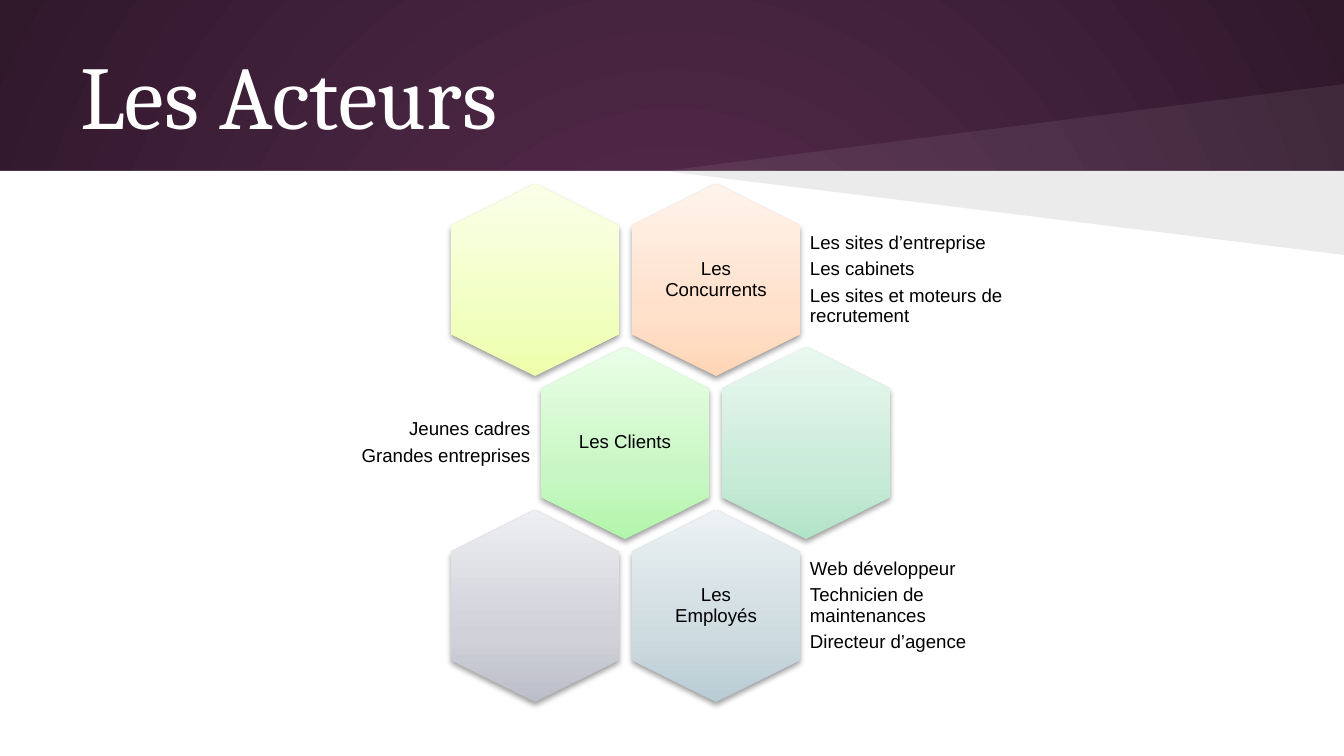
from dataclasses import dataclass
from lxml.etree import SubElement
from pptx import Presentation
from pptx.dml.color import RGBColor
from pptx.enum.shapes import MSO_SHAPE
from pptx.enum.text import MSO_ANCHOR, PP_ALIGN
from pptx.oxml.ns import qn
from pptx.util import Pt

PX = 914400 / 134.4  # EMU in one px
WIDE, HIGH, BAND = 1344, 756, 171
HEX_W, HEX_H = 192, 168  # before the quarter turn


@dataclass(frozen=True)
class Theme:
    white: str = "FFFFFF"
    black: str = "000000"
    back: tuple = ((0, "592D50"), (100, "30182B"))
    head: str = "Cambria"
    body: str = "Arial"
    big: int = 48
    small: int = 10
    lime: tuple = ("EDFFAB", "F2FFC3", "FAFFE8")
    peach: tuple = ("FFD6B6", "FFE1CB", "FFF3EB")
    green: tuple = ("B2F6AB", "C9F7C4", "EAFDE7")
    mint: tuple = ("B2E4C8", "C9EBD8", "EAF8F0")
    grey: tuple = ("BCBEC9", "D0D1D9", "EDEEF1")
    blue: tuple = ("B9CDD4", "CEDBE0", "ECF2F4")


THEME = Theme()


def box(*sizes):
    return [round(n * PX) for n in sizes]


def add(parent, tag, **attrs):
    return SubElement(parent, qn(tag), {k: str(v) for k, v in attrs.items()})


def paint(shape, color, alpha=100):
    shape.shadow.inherit = False
    shape.line.fill.background()
    shape.fill.solid()
    shape.fill.fore_color.rgb = RGBColor.from_string(color)
    if alpha < 100:
        tint = shape.fill._xPr.find(".//" + qn("a:srgbClr"))
        add(tint, "a:alpha", val=alpha * 1000)


def blend(props, stops):
    """Swap the solid fill in props for a gradient and return it."""
    solid = props.find(qn("a:solidFill"))
    grad = add(props, "a:gradFill", rotWithShape=0)
    props.replace(solid, grad)
    items = add(grad, "a:gsLst")
    for pos, color in stops:
        add(add(items, "a:gs", pos=pos * 1000), "a:srgbClr", val=color)
    return grad


def set_back(slide):
    fill = slide.background.fill
    fill.solid()
    grad = blend(slide._element.find(".//" + qn("p:bgPr")), THEME.back)
    rays = add(grad, "a:path", path="circle")
    add(rays, "a:fillToRect", l=50000, t=50000, r=50000, b=50000)


def add_wedge(slide, tip, color, alpha):
    start, *rest = [box(x, y) for x, y in
                    ((WIDE, BAND), (665, BAND), (WIDE, tip))]
    form = slide.shapes.build_freeform(*start, scale=1.0)
    form.add_line_segments(rest, close=True)
    paint(form.convert_to_shape(), color, alpha)


def style(frame, font, size, color, align, pad):
    frame.word_wrap = True
    frame.vertical_anchor = MSO_ANCHOR.MIDDLE
    frame.margin_left = frame.margin_right = round(pad * PX)
    frame.margin_top = frame.margin_bottom = round(pad * PX)
    for para in frame.paragraphs:
        para.alignment = align
        for run in para.runs:
            run.font.name = font
            run.font.size = Pt(size)
            run.font.color.rgb = RGBColor.from_string(color)


def add_title(slide, text):
    title = slide.shapes.title
    title.left, title.top, title.width, title.height = box(67, 31, 1210, 126)
    title.text_frame.text = text
    style(title.text_frame, THEME.head, THEME.big, THEME.white,
          PP_ALIGN.LEFT, 13)
    slide.shapes._spTree.append(title._element)  # above the band


def add_text(slide, left, mid, wide, high, text, align):
    area = slide.shapes.add_textbox(*box(left, mid - high / 2, wide, high))
    frame = area.text_frame
    frame.text = text
    style(frame, THEME.body, THEME.small, THEME.black, align, 5)
    for para in frame.paragraphs:
        para.line_spacing = 0.9
        para.space_after = Pt(3.5)


def add_hex(slide, x, y, tones):
    cell = slide.shapes.add_shape(
        MSO_SHAPE.HEXAGON, *box(x - HEX_W / 2, y - HEX_H / 2, HEX_W, HEX_H))
    cell.rotation = 90
    cell.adjustments[0] = 0.25
    cell.adjustments[1] = 1.1547
    paint(cell, tones[0])
    props = cell._element.spPr
    grad = blend(props, zip((0, 35, 100), tones))
    add(grad, "a:lin", ang=270 * 60000, scaled=0)
    # Soft shadow below the cell
    shade = add(props.find(qn("a:effectLst")), "a:outerShdw", blurRad=Pt(3.1),
                dist=Pt(1.6), dir=90 * 60000, rotWithShape=0)
    add(add(shade, "a:srgbClr", val=THEME.black), "a:alpha", val=38000)


def add_row(slide, row, pair, label, notes):
    """Two cells; odd rows move half a step and carry notes on the left."""
    step, odd = 181, row % 2
    y = 280 + 163 * row
    first = 535 + odd * 90
    for col, tones in enumerate(pair):
        add_hex(slide, first + col * step, y, tones)
    x = first if odd else first + step
    add_text(slide, x - 58, y, 116, 133, label, PP_ALIGN.CENTER)
    wide = 208 if odd else 215
    left = x - 90 - wide if odd else x + 89
    align = PP_ALIGN.RIGHT if odd else PP_ALIGN.LEFT
    add_text(slide, left, y, wide, 116, "\n".join(notes), align)


def main():
    deck = Presentation()
    deck.slide_width, deck.slide_height = box(WIDE, HIGH)
    slide = deck.slides.add_slide(deck.slide_layouts[5])

    # Backdrop: dark band, white page, two wedges
    set_back(slide)
    page = slide.shapes.add_shape(
        MSO_SHAPE.RECTANGLE, *box(0, BAND, WIDE, HIGH - BAND))
    paint(page, THEME.white)
    add_wedge(slide, 84, THEME.white, 7)
    add_wedge(slide, 255, THEME.black, 8)
    add_title(slide, "Les Acteurs")

    # Honeycomb of actors
    rows = (
        ((THEME.lime, THEME.peach), "Les Concurrents",
         ("Les sites d’entreprise", "Les cabinets",
          "Les sites et moteurs de recrutement")),
        ((THEME.green, THEME.mint), "Les Clients",
         ("Jeunes cadres", "Grandes entreprises")),
        ((THEME.grey, THEME.blue), "Les Employés",
         ("Web développeur", "Technicien de maintenances",
          "Directeur d’agence")),
    )
    for row, parts in enumerate(rows):
        add_row(slide, row, *parts)
    deck.save("out.pptx")


if __name__ == "__main__":
    main()
